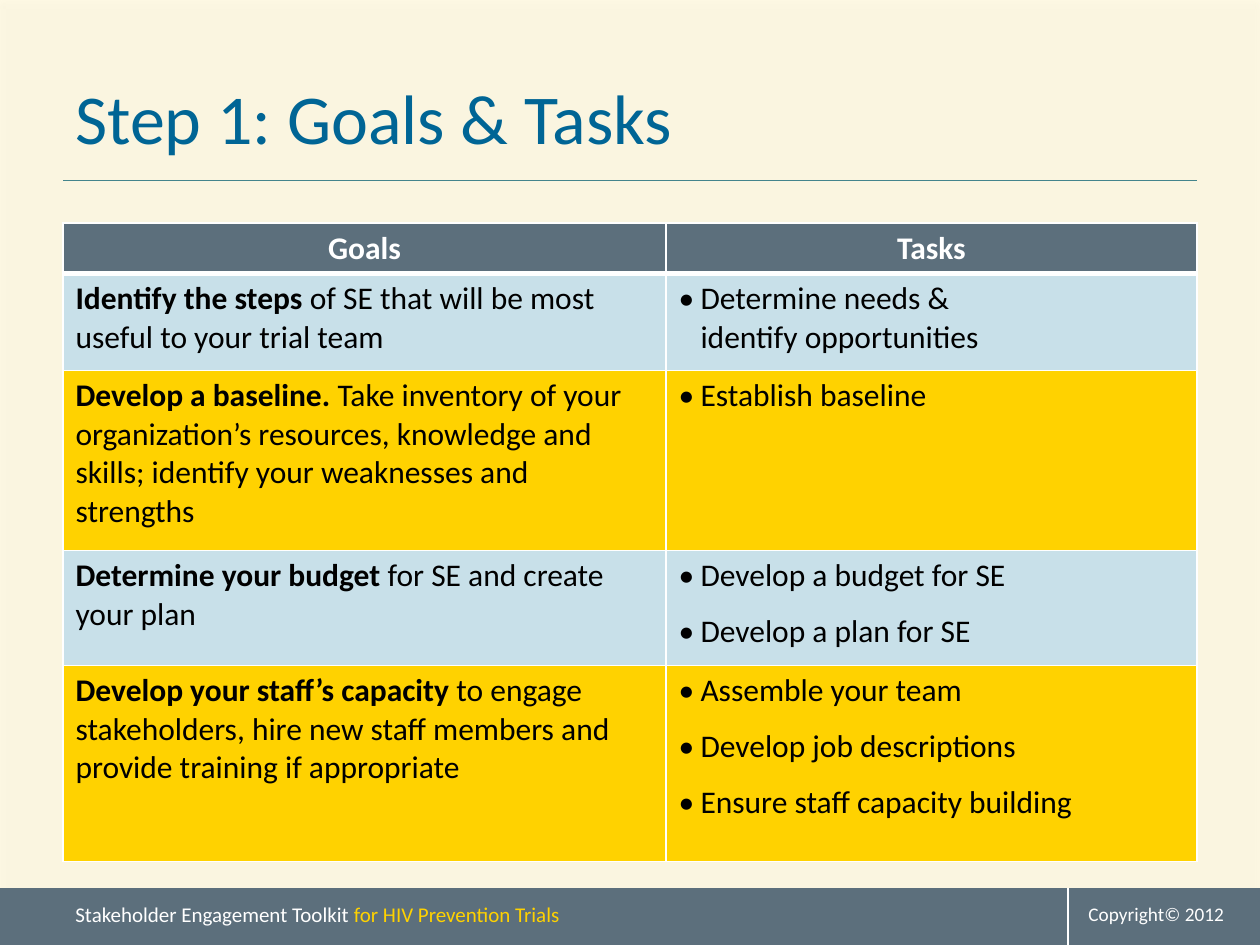
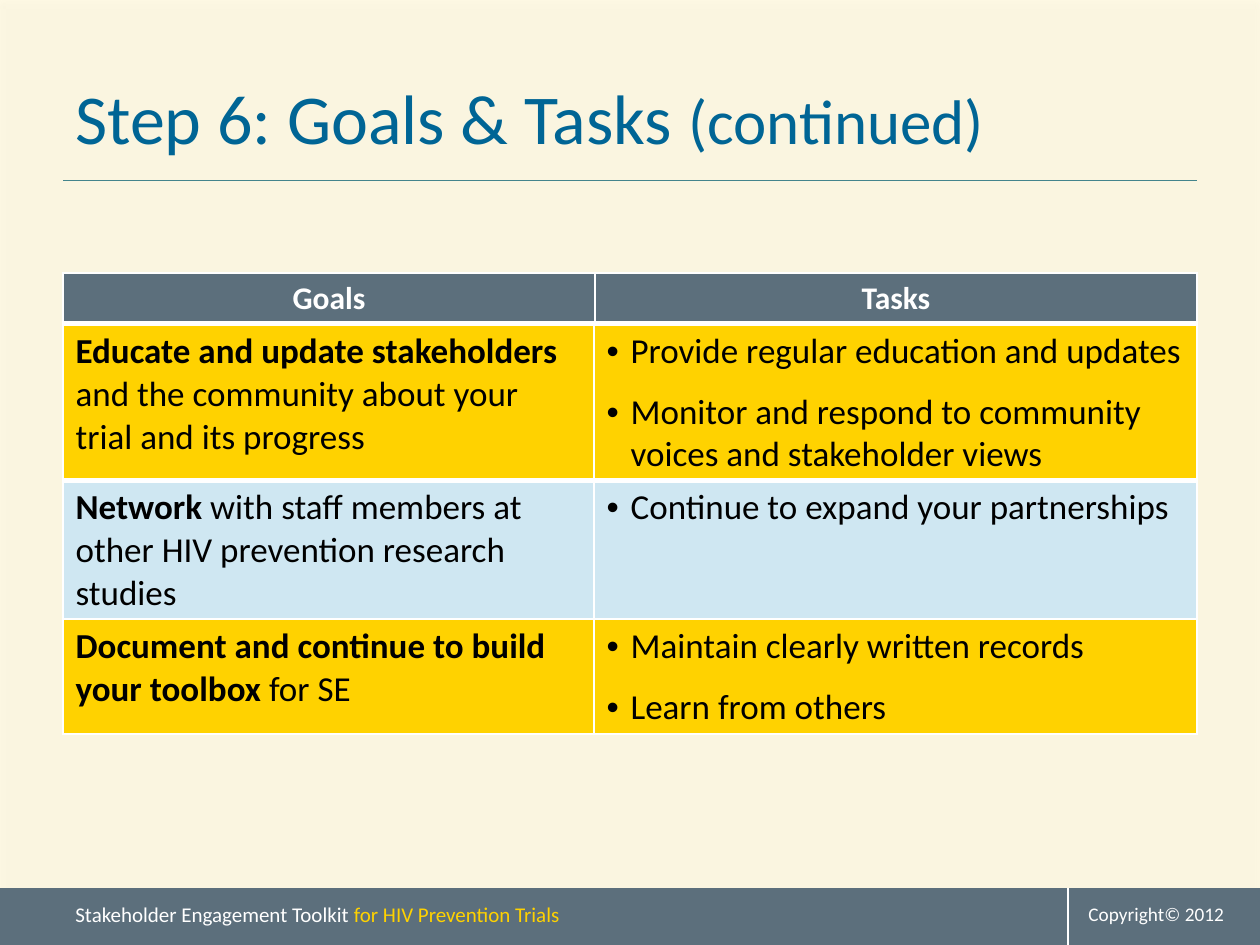
from dataclasses import dataclass

from lxml import etree
from pptx import Presentation, util as u
from pptx.dml.color import RGBColor
from pptx.enum import shapes, text
from pptx.oxml import ns

PX_PER_INCH = 126
SLIDE_W, SLIDE_H = 1260, 945
LEFT, WIDTH = 63, 1134
FOOTER_Y = 888


@dataclass(frozen=True)
class Theme:
    font: str = "Calibri"
    blue: str = "006595"
    rule: str = "2C7C9F"
    slate: str = "5C6F7C"
    yellow: str = "FFD200"
    pale: str = "C8E0E9"
    sky: str = "CFE7F2"
    white: str = "FFFFFF"
    black: str = "000000"
    shadow: str = "808080"
    title: int = 40
    title_small: int = 36
    large: int = 20
    body: int = 18
    footer: int = 12
    copyright: int = 11
    bullet_gap: int = 10


T = Theme()

TITLE = {"size": T.title, "color": T.blue}
HEADER = {"size": T.body, "color": T.white, "bold": True}
FOOTER = {"size": T.footer, "color": T.white}
COPYRIGHT = {"size": T.copyright, "color": T.white}

STEP_1_ROWS = [
    (97, T.pale, ("Identify the steps ",
                  "of SE that will be most useful to your trial team"),
     ["Determine needs &\videntify opportunities"]),
    (180, T.yellow, ("Develop a baseline. ",
                     "Take inventory of your organization’s resources, knowledge "
                     "and skills; identify your weaknesses and strengths"),
     ["Establish baseline"]),
    (115, T.pale, ("Determine your budget ", "for SE and create your plan"),
     ["Develop a budget for SE", "Develop a plan for SE"]),
    (196, T.yellow, ("Develop your staff’s capacity ",
                     "to engage stakeholders, hire new staff members and "
                     "provide training if appropriate"),
     ["Assemble your team", "Develop job descriptions",
      "Ensure staff capacity building"]),
]
STEP_6_ROWS = [
    (156, T.yellow, ("Educate and update stakeholders ",
                     "and the community about your trial and its progress"),
     ["Provide regular education and updates",
      "Monitor and respond to community voices and stakeholder views"]),
    (139, T.sky, ("Network",
                  " with staff members at other HIV prevention research studies"),
     ["Continue to expand your partnerships"]),
    (115, T.yellow, ("Document and continue to build your toolbox ", "for SE"),
     ["Maintain clearly written records", "Learn from others"]),
]


def px(n):
    return u.Emu(round(n * u.Inches(1) / PX_PER_INCH))


def rgb(value):
    return RGBColor.from_string(value)


def sub(parent, tag, **attrs):
    return etree.SubElement(parent, ns.qn(tag), attrs)


def add_runs(p, runs):
    """Add (text, format) pairs to a paragraph."""
    for words, fmt in runs:
        for i, line in enumerate(words.split("\v")):
            if i:
                p.add_line_break()
            r = p.add_run()
            r.text = line
            for name, value in {"name": T.font, "bold": False, **fmt}.items():
                if name == "color":
                    r.font.color.rgb = rgb(value)
                else:
                    setattr(r.font, name, u.Pt(value) if name == "size" else value)


def add_text(s, box, runs, anchor=text.MSO_ANCHOR.TOP):
    tf = s.shapes.add_textbox(*map(px, box)).text_frame
    tf.word_wrap = True
    tf.vertical_anchor = anchor
    add_runs(tf.paragraphs[0], runs)


def add_rect(s, box, color):
    sp = s.shapes.add_shape(shapes.MSO_SHAPE.RECTANGLE, *map(px, box))
    sp.fill.solid()
    sp.fill.fore_color.rgb = rgb(color)
    sp.line.fill.background()
    sp.shadow.inherit = False
    return sp


def add_tint(s):
    """Cover the slide with a nearly clear yellow that casts a soft shadow."""
    spPr = add_rect(s, (0, 0, SLIDE_W, SLIDE_H), T.yellow)._element.spPr
    color = spPr.find(ns.qn("a:solidFill")).find(ns.qn("a:srgbClr"))
    sub(color, "a:alpha", val="10000")
    shadow = sub(spPr.find(ns.qn("a:effectLst")), "a:outerShdw",
                 blurRad=str(u.Pt(3.1)), dist=str(u.Pt(1.8)),
                 dir="5400000", rotWithShape="0")
    sub(sub(shadow, "a:srgbClr", val=T.shadow), "a:alpha", val="35000")


def add_line(s, ends, color, width):
    c = s.shapes.add_connector(shapes.MSO_CONNECTOR.STRAIGHT, *map(px, ends))
    c.line.color.rgb = rgb(color)
    c.line.width = u.Pt(width)
    sub(c._element.spPr, "a:effectLst")


def set_borders(cell, top, bottom):
    tcPr = cell._tc.get_or_add_tcPr()
    sides = (("L", 1), ("R", 1), ("T", top), ("B", bottom))
    for i, (side, width) in enumerate(sides):
        ln = sub(tcPr, f"a:ln{side}", w=str(u.Pt(width)))
        sub(sub(ln, "a:solidFill"), "a:srgbClr", val=T.white)
        tcPr.insert(i, ln)


def add_bullet(p, indent, font):
    pPr = p._p.get_or_add_pPr()
    pPr.set("marL", str(px(indent)))
    pPr.set("indent", str(-px(indent)))
    sub(pPr, "a:buFont", typeface=font)
    sub(pPr, "a:buChar", char="•")


def add_grid(s, top, cols, heights, fills):
    """Add a white-ruled table whose first row ends in a thick rule."""
    frame = s.shapes.add_table(len(heights), len(cols), px(LEFT), px(top),
                               px(sum(cols)), px(sum(heights)))
    table = frame.table
    table.first_row = table.horz_banding = False
    for col, width in zip(table.columns, cols):
        col.width = px(width)
    for i, (row, height, fill) in enumerate(zip(table.rows, heights, fills)):
        row.height = px(height)
        for cell in row.cells:
            cell.fill.solid()
            cell.fill.fore_color.rgb = rgb(fill)
            set_borders(cell, 3 if i == 1 else 1, 3 if i == 0 else 1)
    return table


def fill_header(table):
    for cell, label in zip(table.rows[0].cells, ("Goals", "Tasks")):
        p = cell.text_frame.paragraphs[0]
        p.alignment = text.PP_ALIGN.CENTER
        add_runs(p, [(label, HEADER)])


def fill_body(table, rows, first, size, indent, bullet_font):
    """Write goals and bulleted tasks from row number first on."""
    fmt = {"size": size, "color": T.black}
    for i, (_, _, (lead, rest), tasks) in enumerate(rows, first):
        p = table.cell(i, 0).text_frame.paragraphs[0]
        p.space_before = u.Pt(T.bullet_gap)
        add_runs(p, [(lead, {**fmt, "bold": True}), (rest, fmt)])
        tf = table.cell(i, 1).text_frame
        for j, task in enumerate(tasks):
            p = tf.add_paragraph() if j else tf.paragraphs[0]
            p.space_before = u.Pt(T.bullet_gap)
            add_bullet(p, indent, bullet_font)
            add_runs(p, [(task, fmt)])


def add_slide(prs, title):
    s = prs.slides.add_slide(prs.slide_layouts[6])
    add_line(s, (LEFT, 180, LEFT + WIDTH, 180), T.rule, 0.25)
    add_tint(s)
    add_rect(s, (0, FOOTER_Y, SLIDE_W, SLIDE_H - FOOTER_Y), T.slate)
    add_text(s, (LEFT, 895, 998, 38),
             [("Stakeholder Engagement Toolkit ", FOOTER),
              ("for HIV Prevention Trials", {**FOOTER, "color": T.yellow})])
    add_line(s, (1068, FOOTER_Y, 1068, SLIDE_H), T.white, 0.75)
    add_text(s, (1076, 896, 180, 35), [("Copyright© 2012", COPYRIGHT)])
    add_text(s, (LEFT, 38, WIDTH, 158), title, text.MSO_ANCHOR.MIDDLE)
    return s


def add_step_1(prs):
    s = add_slide(prs, [("Step 1: Goals & Tasks", TITLE)])
    table = add_grid(s, 223, (603, 531),
                     [50] + [row[0] for row in STEP_1_ROWS],
                     [T.slate] + [row[1] for row in STEP_1_ROWS])
    fill_header(table)
    fill_body(table, STEP_1_ROWS, 1, T.body, 22, T.font)


def add_step_6(prs):
    s = add_slide(prs, [("Step 6: Goals & Tasks ", TITLE),
                        ("(continued)", {**TITLE, "size": T.title_small})])
    body = add_grid(s, 324, (531, 603), [row[0] for row in STEP_6_ROWS],
                    [row[1] for row in STEP_6_ROWS])
    fill_body(body, STEP_6_ROWS, 0, T.large, 24, "Arial")
    fill_header(add_grid(s, 273, (532, 602), [50], [T.slate]))


def main():
    prs = Presentation()
    prs.slide_width, prs.slide_height = px(SLIDE_W), px(SLIDE_H)
    add_step_1(prs)
    add_step_6(prs)
    prs.save("out.pptx")


if __name__ == "__main__":
    main()
